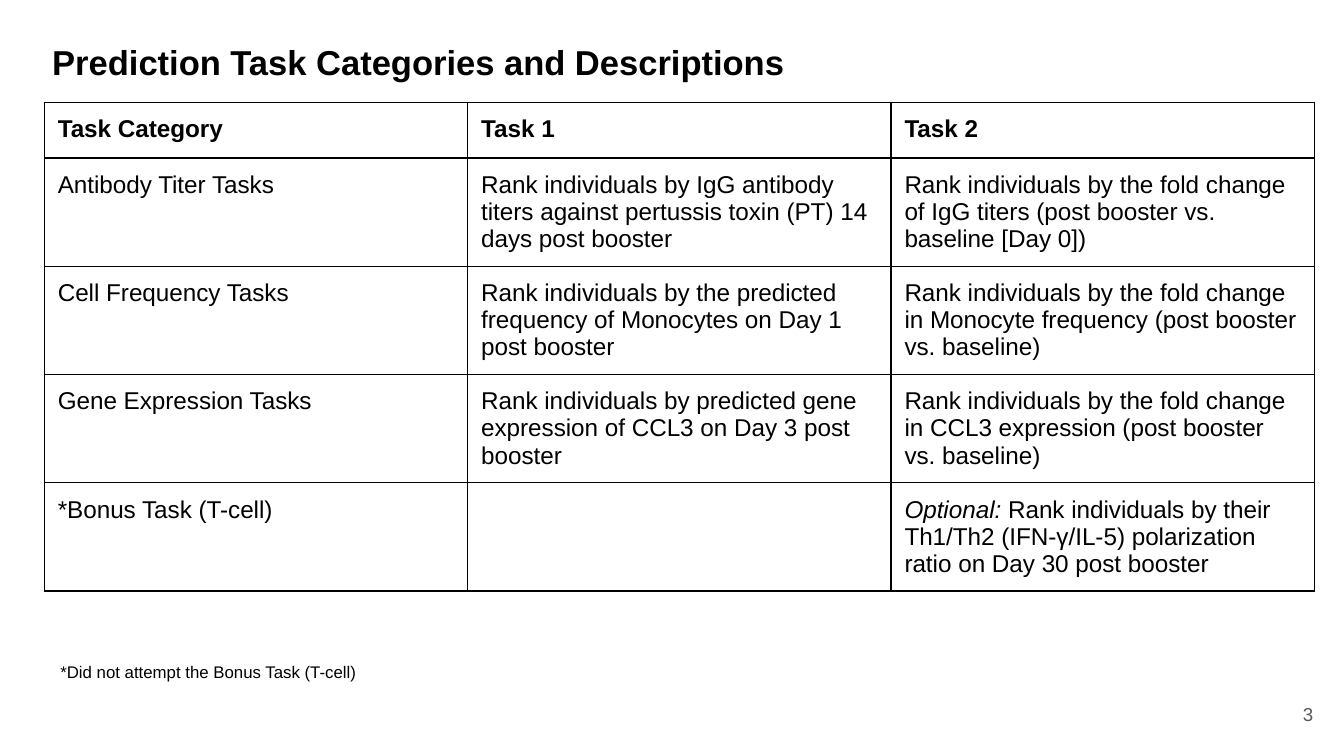
"""Build a slide with a table of prediction task categories and descriptions."""
from lxml.etree import SubElement
from pptx import Presentation
from pptx.dml.color import RGBColor
from pptx.enum.text import MSO_ANCHOR, PP_ALIGN
from pptx.oxml.ns import qn
from pptx.util import Pt

FONT = "Arial"
BLACK = RGBColor(0x00, 0x00, 0x00)
GRAY = RGBColor(0x59, 0x59, 0x59)
INSET = Pt(7.2)

TITLE = "Prediction Task Categories and Descriptions"
FOOTNOTE = "*Did not attempt the Bonus Task (T-cell)"
PAGE_NUMBER = "3"
OPTIONAL = "Optional:"
TASKS = [
    ("Task Category", "Task 1", "Task 2"),
    ("Antibody Titer Tasks",
     "Rank individuals by IgG antibody titers against pertussis toxin (PT) 14 days post booster",
     "Rank individuals by the fold change of IgG titers (post booster vs. baseline [Day 0])"),
    ("Cell Frequency Tasks",
     "Rank individuals by the predicted frequency of Monocytes on Day 1 post booster",
     "Rank individuals by the fold change in Monocyte frequency (post booster vs. baseline)"),
    ("Gene Expression Tasks",
     "Rank individuals by predicted gene expression of CCL3 on Day 3 post booster",
     "Rank individuals by the fold change in CCL3 expression (post booster vs. baseline)"),
    ("*Bonus Task (T-cell)",
     "",
     "Optional: Rank individuals by their Th1/Th2 (IFN-γ/IL-5) polarization ratio on Day 30 post booster"),
]
TABLE_LEFT, TABLE_TOP = 23.76, 54.72
COLUMN_WIDTH, HEADER_HEIGHT, BODY_HEIGHT = 226.8, 30, 57.8


def format_font(font, size, color=BLACK, bold=False):
    font.name = FONT
    font.size = Pt(size)
    font.color.rgb = color
    font.bold = bold


def add_text(slide, text, box, size, color=BLACK, bold=False,
             anchor=MSO_ANCHOR.TOP, alignment=PP_ALIGN.LEFT):
    text_frame = slide.shapes.add_textbox(*map(Pt, box)).text_frame
    text_frame.text = text
    text_frame.word_wrap = True
    text_frame.vertical_anchor = anchor
    text_frame.margin_left = text_frame.margin_right = INSET
    text_frame.margin_top = text_frame.margin_bottom = INSET
    paragraph = text_frame.paragraphs[0]
    paragraph.alignment = alignment
    format_font(paragraph.runs[0].font, size, color, bold)
    return paragraph


def add_borders(cell):
    properties = cell._tc.get_or_add_tcPr()
    for index, side in enumerate(("lnL", "lnR", "lnT", "lnB")):
        line = SubElement(properties, qn(f"a:{side}"), w=str(Pt(0.75)))
        fill = SubElement(line, qn("a:solidFill"))
        SubElement(fill, qn("a:srgbClr"), val=str(BLACK))
        properties.insert(index, line)


def fill_cell(cell, text, bold):
    cell.margin_left = cell.margin_right = INSET
    cell.margin_top = cell.margin_bottom = INSET
    cell.fill.background()
    add_borders(cell)
    paragraph = cell.text_frame.paragraphs[0]
    paragraph.text = text
    if text.startswith(OPTIONAL):
        paragraph.text = OPTIONAL
        paragraph.runs[0].font.italic = True
        paragraph.add_run().text = text.removeprefix(OPTIONAL)
    for run in paragraph.runs:
        format_font(run.font, 13, bold=bold)


def add_task_table(slide):
    heights = [HEADER_HEIGHT] + [BODY_HEIGHT] * (len(TASKS) - 1)
    columns = len(TASKS[0])
    table = slide.shapes.add_table(
        len(TASKS), columns, Pt(TABLE_LEFT), Pt(TABLE_TOP),
        Pt(COLUMN_WIDTH * columns), Pt(sum(heights))).table
    table.first_row = False
    table.horz_banding = False
    for column in table.columns:
        column.width = Pt(COLUMN_WIDTH)
    for row_index, (row, height, texts) in enumerate(zip(table.rows, heights, TASKS)):
        row.height = Pt(height)
        for cell, text in zip(row.cells, texts):
            fill_cell(cell, text, bold=row_index == 0)


def main():
    presentation = Presentation()
    presentation.slide_width = Pt(720)
    presentation.slide_height = Pt(405)
    slide = presentation.slides.add_slide(presentation.slide_layouts[6])
    add_task_table(slide)
    title = add_text(slide, TITLE, (20.88, 8.64, 671, 45.4), 18.5, bold=True,
                     anchor=MSO_ANCHOR.MIDDLE)
    title.line_spacing = 1.15
    add_text(slide, FOOTNOTE, (25.2, 349.2, 671, 36.7), 9)
    add_text(slide, PAGE_NUMBER, (667.44, 367.2, 43.2, 31), 10, GRAY,
             anchor=MSO_ANCHOR.MIDDLE, alignment=PP_ALIGN.RIGHT)
    presentation.save("out.pptx")


if __name__ == "__main__":
    main()
